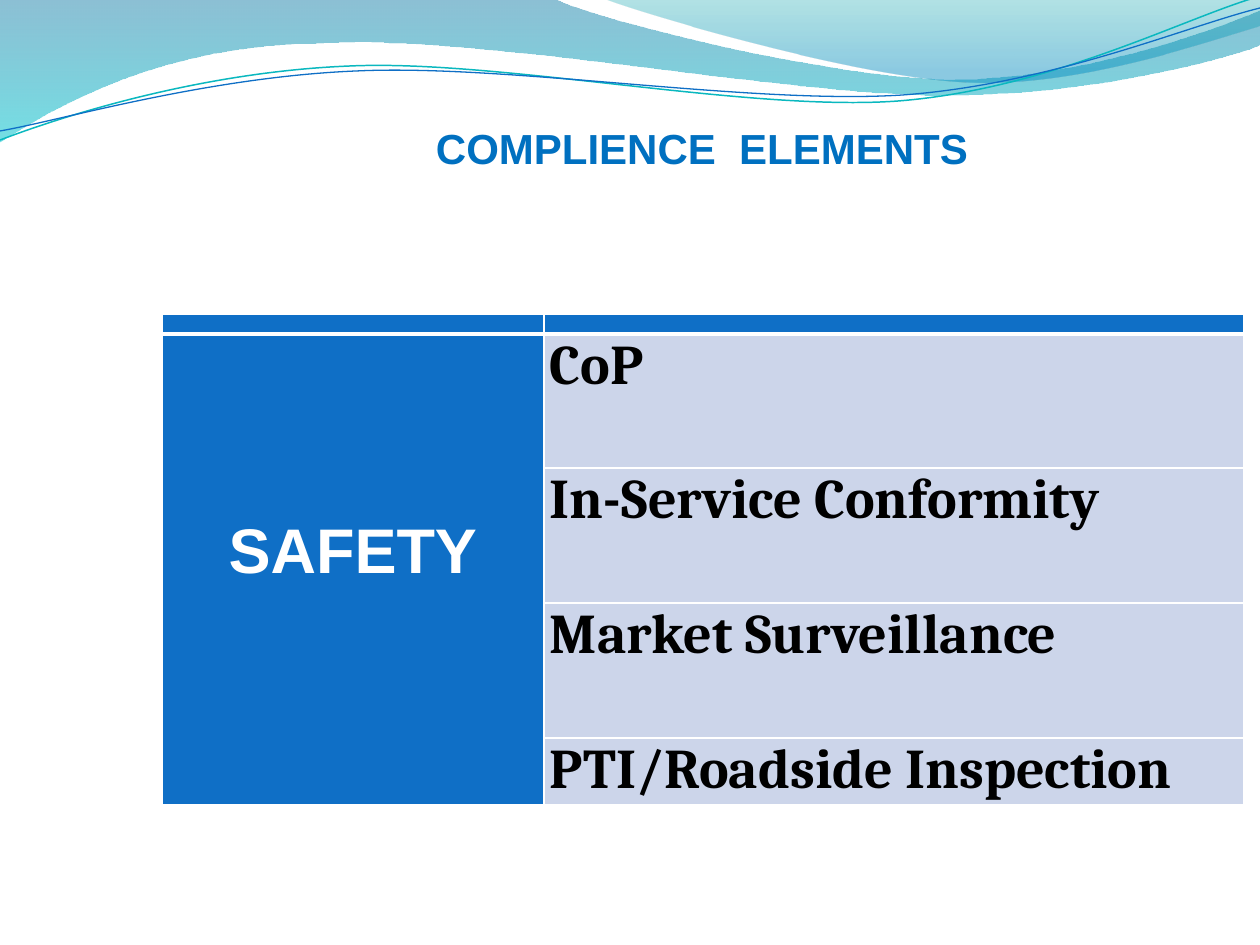
from lxml import etree
from pptx import Presentation, util as u
from pptx.dml.color import RGBColor
from pptx.enum import text
from pptx.oxml.ns import qn

PX = 914400 // 126
WHITE = RGBColor(255, 255, 255)
BLACK = RGBColor(0, 0, 0)
BLUE = RGBColor(0x0F, 0x6F, 0xC6)
TITLE_BLUE = RGBColor(0, 0x70, 0xC0)
PALE = RGBColor(0xCC, 0xD5, 0xEA)
TEAL = RGBColor(0x0A, 0xB8, 0xBF)
DEEP_BLUE = RGBColor(0, 0x74, 0xA1)
CYAN = RGBColor(0, 0xC6, 0xCF)
SEA_GREEN = RGBColor(0, 0xA1, 0xA9)
SKY_BLUE = RGBColor(0, 0x8B, 0xBF)

deck = Presentation()
deck.slide_width, deck.slide_height = 1260 * PX, 945 * PX
slide = deck.slides.add_slide(deck.slide_layouts[6])


def write(frame, words, size, color, font="Arial", align=text.PP_ALIGN.CENTER):
    paragraph = frame.paragraphs[0]
    paragraph.alignment = align
    run = paragraph.add_run()
    run.text = words
    run.font.size, run.font.name, run.font.bold = u.Pt(size), font, True
    run.font.color.rgb = color


def draw_curve(start, segments, closed):
    builder = slide.shapes.build_freeform(*start, scale=PX)
    builder.add_line_segments([point for segment in segments for point in segment], close=closed)
    curve = builder.convert_to_shape()
    curve.shadow.inherit = False
    lines = iter(list(curve._element.spPr.iter(qn("a:lnTo"))))
    for segment in segments:
        group = [next(lines) for point in segment]
        if len(group) == 3:
            bend = etree.Element(qn("a:cubicBezTo"))
            group[0].addprevious(bend)
            for line in group:
                bend.append(line[0])
                line.getparent().remove(line)
    return curve


waves = [
    ((0, -1), [
        [(554, -1)],
        [(600, 21), (837, 79), (955, 79)],
        [(1075, 79), (1207, 33), (1260, 11)],
        [(1261, 45)],
        [(1238, 55), (1096, 96), (940, 95)],
        [(784, 95), (481, 35), (324, 43)],
        [(163, 44), (58, 105), (-1, 142)],
    ], [(0, DEEP_BLUE, 45), (1, CYAN, 55)]),
    ((604, -1), [
        [(641, 14), (859, 78), (969, 82)],
        [(1079, 87), (1211, 40), (1260, 26)],
        [(1260, 0)],
    ], [(0, SEA_GREEN, 30), (0.8, SKY_BLUE, 45)]),
]
for start, segments, stops in waves:
    wave = draw_curve(start, segments, True)
    wave.line.fill.background()
    wave.fill.gradient()
    wave.fill.gradient_angle = 270
    for stop, (position, color, opacity) in zip(wave.fill.gradient_stops, stops):
        stop.position = position
        stop.color.rgb = color
    for tint, (position, color, opacity) in zip(wave._element.spPr.iter(qn("a:srgbClr")), stops):
        etree.SubElement(tint, qn("a:alpha"), val=str(opacity * 1000))

strands = [
    ((0, 140), [
        [(60, 117), (199, 72), (349, 66)],
        [(498, 59), (747, 112), (898, 101)],
        [(1050, 89), (1182, 19), (1257, -3)],
    ], TEAL, 0.85),
    ((0, 131), [
        [(59, 121), (207, 77), (357, 71)],
        [(508, 64), (752, 105), (903, 95)],
        [(1053, 84), (1187, 26), (1260, 8)],
    ], BLUE, 0.75),
]
for start, segments, color, width in strands:
    strand = draw_curve(start, segments, False)
    strand.fill.background()
    strand.line.color.rgb = color
    strand.line.width = u.Pt(width)

title = slide.shapes.add_textbox(144 * PX, 76 * PX, 1116 * PX, 131 * PX).text_frame
title.word_wrap = True
title.margin_top = 47 * PX
write(title, "COMPLIENCE  ELEMENTS", 24, TITLE_BLUE)

column_widths = [382, 700]
row_heights = [20, 134, 135, 135, 67]
elements = slide.shapes.add_table(
    5, 2, 162 * PX, 314 * PX, sum(column_widths) * PX, sum(row_heights) * PX).table
for column, width in zip(elements.columns, column_widths):
    column.width = width * PX
for row, height in zip(elements.rows, row_heights):
    row.height = height * PX

for r in range(5):
    for c in range(2):
        cell = elements.cell(r, c)
        cell.margin_left = cell.margin_right = 6 * PX
        cell.margin_top = cell.margin_bottom = 0
        for side in ("lnL", "lnR", "lnT", "lnB"):
            thick = (r, side) in ((0, "lnB"), (1, "lnT"))
            border = etree.SubElement(cell._tc.get_or_add_tcPr(), qn(f"a:{side}"),
                                      w=str(u.Pt(3 if thick else 1)))
            paint = etree.SubElement(border, qn("a:solidFill"))
            etree.SubElement(paint, qn("a:srgbClr"), val=str(WHITE))
        cell.fill.solid()
        cell.fill.fore_color.rgb = BLUE if r == 0 or c == 0 else PALE
        if r == 0:
            cell.text_frame.paragraphs[0].font.size = u.Pt(1)

safety = elements.cell(1, 0)
safety.merge(elements.cell(4, 0))
safety.vertical_anchor = text.MSO_ANCHOR.MIDDLE
safety.margin_bottom = 36 * PX
write(safety.text_frame, "SAFETY", 36, WHITE)

checks = ["CoP", "In-Service Conformity", "Market Surveillance", "PTI/Roadside Inspection"]
for r, check in enumerate(checks, 1):
    write(elements.cell(r, 1).text_frame, check, 32, BLACK, font="Cambria", align=text.PP_ALIGN.LEFT)

deck.save("out.pptx")
